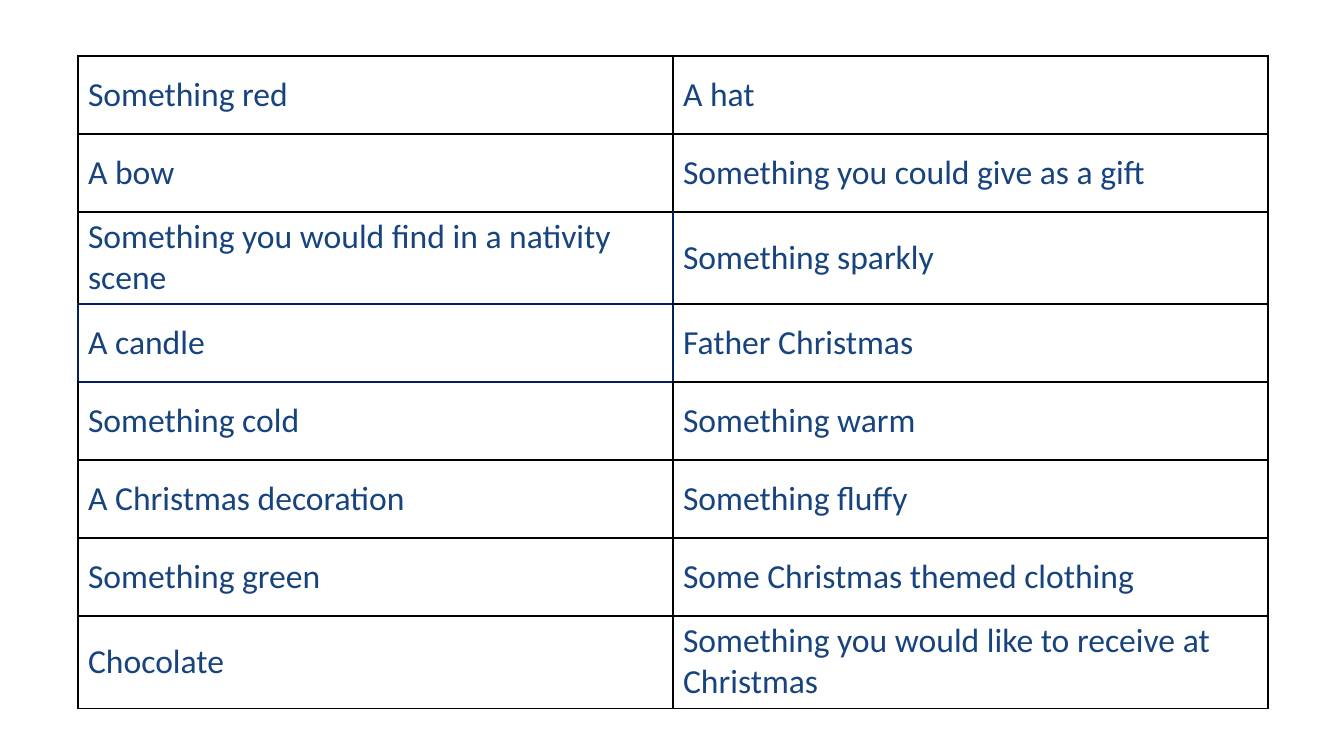
from lxml.etree import SubElement
from pptx import Presentation
from pptx.dml.color import RGBColor
from pptx.enum.text import MSO_ANCHOR
from pptx.oxml.ns import qn
from pptx.util import Emu, Pt

INK = RGBColor(0x17, 0x44, 0x7E)
BLACK = RGBColor(0x00, 0x00, 0x00)
NAVY = RGBColor(0x00, 0x20, 0x60)

HUNT_ITEMS = [
    ("Something red", "A hat"),
    ("A bow", "Something you could give as a gift"),
    ("Something you would find in a nativity scene", "Something sparkly"),
    ("A candle", "Father Christmas"),
    ("Something cold", "Something warm"),
    ("A Christmas decoration", "Something fluffy"),
    ("Something green", "Some Christmas themed clothing"),
    ("Chocolate", "Something you would like to receive at Christmas"),
]
NAVY_SIDES = {(2, 0): "RB", (2, 1): "L", (3, 0): "LRTB", (3, 1): "L", (4, 0): "T"}


def px(length):
    return Emu(round(length * 914400 / 100.8))


class HuntSlide:
    font_name = "Calibri"
    font_size = Pt(24)
    border_width = Pt(1)

    def __init__(self, deck):
        self.slide = deck.slides.add_slide(deck.slide_layouts[6])

    def border(self, cell, side, color):
        properties = cell._tc.get_or_add_tcPr()
        line = SubElement(properties, qn(f"a:ln{side}"), w=str(self.border_width))
        fill = SubElement(line, qn("a:solidFill"))
        SubElement(fill, qn("a:srgbClr"), val=str(color))

    def cell(self, cell, text, navy_sides):
        cell.text = text
        cell.vertical_anchor = MSO_ANCHOR.MIDDLE
        font = cell.text_frame.paragraphs[0].font
        font.name, font.size = self.font_name, self.font_size
        font.color.rgb = INK
        for side in "LRTB":
            self.border(cell, side, NAVY if side in navy_sides else BLACK)
        cell.fill.background()

    def table(self, items, left, top, column_width, row_height):
        row_count, column_count = len(items), len(items[0])
        grid = self.slide.shapes.add_table(
            row_count, column_count, px(left), px(top),
            px(column_width * column_count), px(row_height * row_count),
        ).table
        grid.first_row = grid.horz_banding = False
        for column in grid.columns:
            column.width = px(column_width)
        for row in grid.rows:
            row.height = px(row_height)
        for r, row_items in enumerate(items):
            for c, item in enumerate(row_items):
                self.cell(grid.cell(r, c), item, NAVY_SIDES.get((r, c), ""))


def main():
    deck = Presentation()
    deck.slide_width, deck.slide_height = px(1344), px(756)
    HuntSlide(deck).table(HUNT_ITEMS, left=78, top=56, column_width=595, row_height=78)
    deck.save("out.pptx")


if __name__ == "__main__":
    main()
